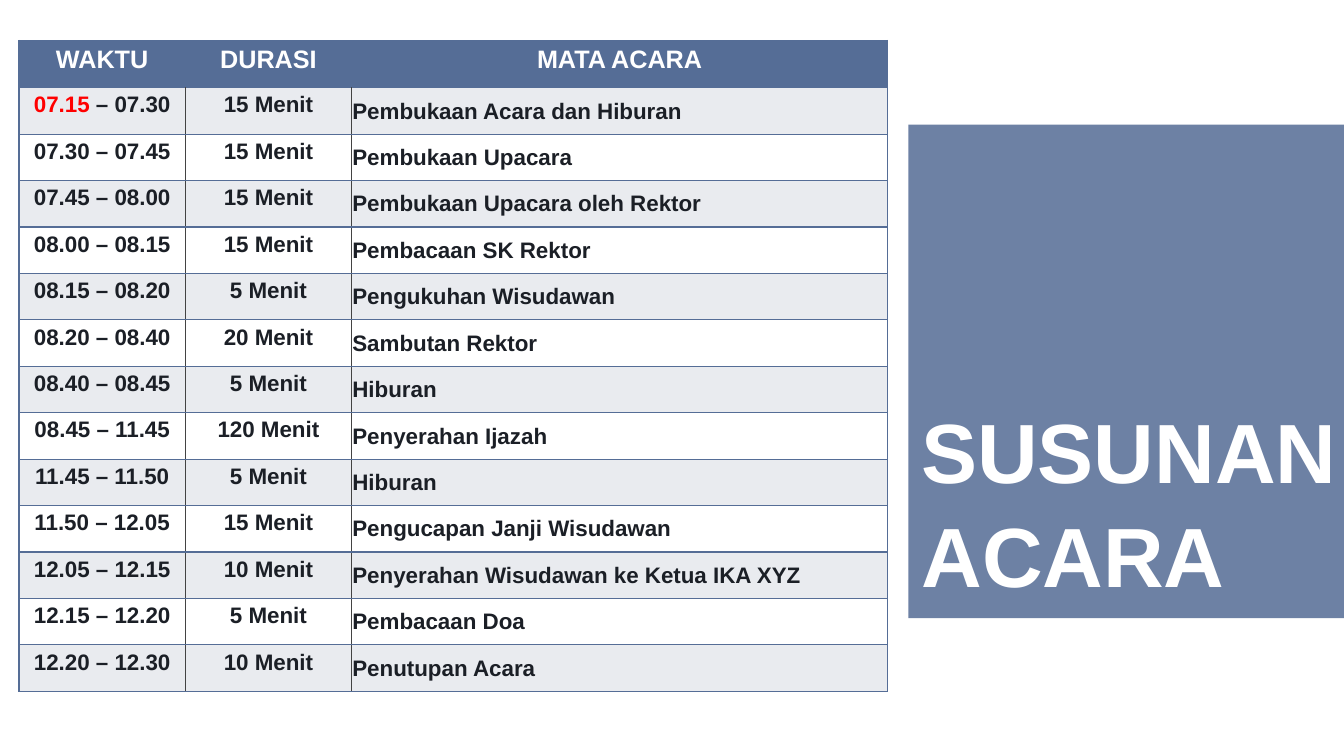
import pptx
import pptx.dml.color
import pptx.enum.shapes
import pptx.enum.text
import pptx.oxml.ns
import pptx.util
import lxml.etree

Cm = pptx.util.Cm
ALIGN = pptx.enum.text.PP_ALIGN
ANCHOR = pptx.enum.text.MSO_ANCHOR

TITLE = "SUSUNAN\vACARA"
HEADINGS = ("WAKTU", "DURASI", "MATA ACARA")
LATE_START = "07.15"
AGENDA = [
    ("07.15 – 07.30", "15 Menit", "Pembukaan Acara dan Hiburan"),
    ("07.30 – 07.45", "15 Menit", "Pembukaan Upacara"),
    ("07.45 – 08.00", "15 Menit", "Pembukaan Upacara oleh Rektor"),
    ("08.00 – 08.15", "15 Menit", "Pembacaan SK Rektor"),
    ("08.15 – 08.20", "5 Menit", "Pengukuhan Wisudawan"),
    ("08.20 – 08.40", "20 Menit", "Sambutan Rektor"),
    ("08.40 – 08.45", "5 Menit", "Hiburan"),
    ("08.45 – 11.45", "120 Menit", "Penyerahan Ijazah"),
    ("11.45 – 11.50", "5 Menit", "Hiburan"),
    ("11.50 – 12.05", "15 Menit", "Pengucapan Janji Wisudawan"),
    ("12.05 – 12.15", "10 Menit", "Penyerahan Wisudawan ke Ketua IKA XYZ"),
    ("12.15 – 12.20", "5 Menit", "Pembacaan Doa"),
    ("12.20 – 12.30", "10 Menit", "Penutupan Acara"),
]

THEME = {
    "font": "Arial",
    "blue": "556D96", "grid": "434343", "band": "E9EBEF", "white": "FFFFFF",
    "ink": "1B1F26", "alert": "FF0000",
    "title": 60, "heading": 18, "body": 16,
    "banner_opacity": 86, "border": 1,
}

SLIDE_W, SLIDE_H = 33.87, 19.05
AGENDA_LEFT, AGENDA_TOP = 0.48, 1.02
COLUMN_WIDTHS = (4.19, 4.19, 13.51)
HEADING_H, ROW_H = 1.19, 1.17
BANNER_LEFT, BANNER_TOP, BANNER_H = 22.89, 3.14, 12.44
BANNER_W = SLIDE_W - BANNER_LEFT
TITLE_TOP, TITLE_H, TITLE_INSET = 7.04, 8.53, 0.33


def rgb(name):
    return pptx.dml.color.RGBColor.from_string(THEME[name])


def style(run, size, color):
    run.font.name = THEME["font"]
    run.font.size = pptx.util.Pt(THEME[size])
    run.font.bold = True
    run.font.color.rgb = rgb(color)


def add_xml(parent, tag, **attributes):
    return lxml.etree.SubElement(parent, pptx.oxml.ns.qn(tag), **attributes)


def set_borders(cell, **sides):
    properties = cell._tc.get_or_add_tcPr()
    for position, side in enumerate("LRTB"):
        width = str(pptx.util.Pt(THEME["border"]))
        line = lxml.etree.Element(pptx.oxml.ns.qn("a:ln" + side), w=width)
        properties.insert(position, line)
        color = sides[side]
        if color:
            add_xml(add_xml(line, "a:solidFill"), "a:srgbClr", val=THEME[color])
        else:
            add_xml(line, "a:noFill")


def fill_cell(cell, row, column, text):
    heading = row == 0
    last = len(HEADINGS) - 1
    cell.fill.solid()
    cell.fill.fore_color.rgb = rgb("blue" if heading else "band" if row % 2 else "white")
    inner = None if heading else "grid"
    set_borders(cell, T="blue", B="blue",
                L="blue" if column == 0 else inner,
                R="blue" if column == last else inner)
    paragraph = cell.text_frame.paragraphs[0]
    if text.startswith(LATE_START):
        parts = [(LATE_START, "alert"), (text[len(LATE_START):], "ink")]
    else:
        parts = [(text, "white" if heading else "ink")]
    for words, color in parts:
        run = paragraph.add_run()
        run.text = words
        style(run, "heading" if heading else "body", color)
    if heading or column < last:
        paragraph.alignment = ALIGN.CENTER
    else:
        paragraph.alignment = ALIGN.LEFT
        cell.vertical_anchor = ANCHOR.MIDDLE
        cell.margin_left = cell.margin_right = cell.margin_top = Cm(0.02)
        cell.margin_bottom = Cm(0)


def add_banner(slide):
    center_x = BANNER_LEFT + BANNER_W / 2
    center_y = BANNER_TOP + BANNER_H / 2
    banner = slide.shapes.add_shape(
        pptx.enum.shapes.MSO_SHAPE.RECTANGLE,
        Cm(center_x - BANNER_H / 2), Cm(center_y - BANNER_W / 2),
        Cm(BANNER_H), Cm(BANNER_W))
    banner.rotation = 90
    banner.shadow.inherit = False
    banner.line.fill.background()
    banner.fill.solid()
    banner.fill.fore_color.rgb = rgb("blue")
    color = banner._element.spPr.find(".//" + pptx.oxml.ns.qn("a:srgbClr"))
    add_xml(color, "a:alpha", val=str(THEME["banner_opacity"] * 1000))


def add_title(slide):
    title = slide.shapes.add_textbox(
        Cm(BANNER_LEFT), Cm(TITLE_TOP), Cm(BANNER_W), Cm(TITLE_H)).text_frame
    title.word_wrap = True
    title.vertical_anchor = ANCHOR.BOTTOM
    title.margin_left = title.margin_top = title.margin_bottom = Cm(TITLE_INSET)
    title.margin_right = Cm(0)
    title.text = TITLE
    title.paragraphs[0].line_spacing = 1.04
    for run in title.paragraphs[0].runs:
        style(run, "title", "white")


def add_agenda(slide):
    rows = [HEADINGS] + AGENDA
    agenda = slide.shapes.add_table(
        len(rows), len(HEADINGS), Cm(AGENDA_LEFT), Cm(AGENDA_TOP),
        Cm(sum(COLUMN_WIDTHS)), Cm(HEADING_H + ROW_H * len(AGENDA))).table
    for column, width in enumerate(COLUMN_WIDTHS):
        agenda.columns[column].width = Cm(width)
    for row, texts in enumerate(rows):
        agenda.rows[row].height = Cm(ROW_H if row else HEADING_H)
        for column, text in enumerate(texts):
            fill_cell(agenda.cell(row, column), row, column, text)


def main():
    deck = pptx.Presentation()
    deck.slide_width, deck.slide_height = Cm(SLIDE_W), Cm(SLIDE_H)
    slide = deck.slides.add_slide(deck.slide_layouts[6])
    add_banner(slide)
    add_title(slide)
    add_agenda(slide)
    deck.save("out.pptx")


if __name__ == "__main__":
    main()
